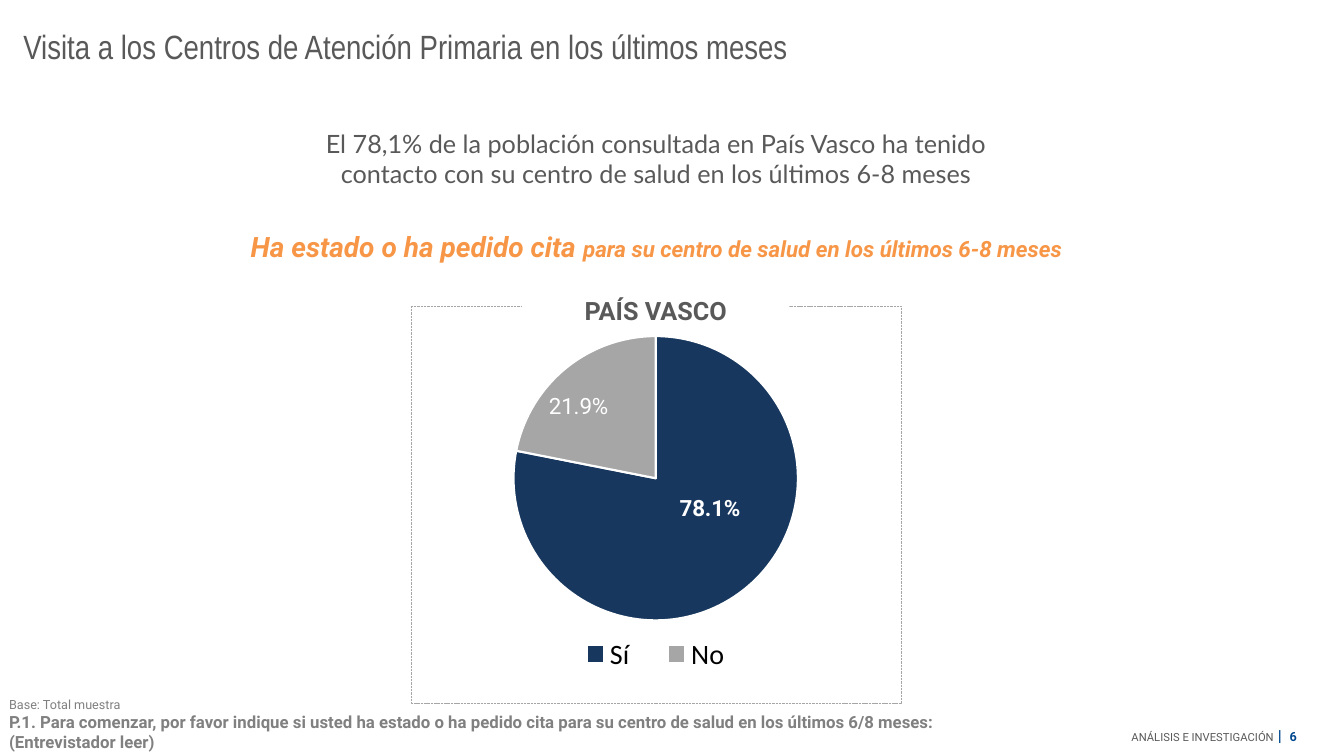
from lxml.etree import SubElement
from pptx import Presentation
from pptx.chart.data import CategoryChartData
from pptx.dml.color import RGBColor
from pptx.enum.chart import XL_CHART_TYPE, XL_LABEL_POSITION, XL_LEGEND_POSITION
from pptx.enum.dml import MSO_LINE
from pptx.enum.shapes import MSO_SHAPE
from pptx.enum.text import MSO_ANCHOR, PP_ALIGN
from pptx.oxml.ns import qn
from pptx.util import Inches, Pt

NAVY, SILVER, ORANGE, WHITE = "17375E", "A6A6A6", "F79646", "FFFFFF"
DARK, GREY, BLUE = "595959", "808080", "00478F"


def rgb(value):
    return RGBColor.from_string(value)


def style(font, color, **fmt):
    font.color.rgb = rgb(color)
    for name, value in fmt.items():
        setattr(font, name, Pt(value) if name == "size" else value)


def place(parent, index, **shares):
    """Insert a manual chart layout, in shares of the chart's size."""
    for old in parent.findall(qn("c:layout")):
        parent.remove(old)
    layout = SubElement(parent, qn("c:layout"))
    manual = SubElement(layout, qn("c:manualLayout"))
    for tag, value in shares.items():
        SubElement(manual, qn(f"c:{tag}")).set("val", str(value))
    parent.insert(index, layout)


class SlideBuilder:
    """Places elements by box: left, top, width, height in percent of the slide."""

    def __init__(self, prs):
        self.prs = prs
        self.slide = prs.slides.add_slide(prs.slide_layouts[5])
        self.shapes = self.slide.shapes

    def box(self, x, y, w, h):
        width, height = self.prs.slide_width, self.prs.slide_height
        return [int(v * side / 100) for v, side in
                ((x, width), (y, height), (w, width), (h, height))]

    def fill_text(self, sp, paragraphs, align=PP_ALIGN.LEFT, anchor=MSO_ANCHOR.TOP,
                  wrap=True, after=0):
        """Fill a shape; each paragraph is a list of (text, format) runs."""
        tf = sp.text_frame
        tf.word_wrap, tf.vertical_anchor = wrap, anchor
        for i, runs in enumerate(paragraphs):
            p = tf.paragraphs[0] if i == 0 else tf.add_paragraph()
            p.alignment, p.space_after = align, Pt(after)
            for text, fmt in runs:
                r = p.add_run()
                r.text = text
                style(r.font, **fmt)
        return tf

    def title(self, box, text, **fmt):
        sp = self.shapes.title
        sp.left, sp.top, sp.width, sp.height = self.box(*box)
        self.fill_text(sp, [[(text, fmt)]])

    def text(self, box, paragraphs, **layout):
        sp = self.shapes.add_textbox(*self.box(*box))
        return self.fill_text(sp, paragraphs, **layout)

    def rect(self, box, fill=None, line=None):
        sp = self.shapes.add_shape(MSO_SHAPE.RECTANGLE, *self.box(*box))
        sp.shadow.inherit = False
        if fill:
            sp.fill.solid()
            sp.fill.fore_color.rgb = rgb(fill)
        else:
            sp.fill.background()
        if line:
            sp.line.color.rgb = rgb(line)
            sp.line.width = Pt(0.25)
            sp.line.dash_style = MSO_LINE.SQUARE_DOT
        else:
            sp.line.fill.background()
        return sp

    def pie(self, box, slices):
        """Draw slices of (category, value, color, bold, label shift)."""
        data = CategoryChartData(number_format="0.0\\%")
        data.categories = [s[0] for s in slices]
        data.add_series("Series 1", [s[1] for s in slices])
        chart = self.shapes.add_chart(XL_CHART_TYPE.PIE, *self.box(*box), data).chart
        style(chart.font, "000000", name="Calibri", size=10)
        chart.has_title = False
        chart.has_legend = True
        legend = chart.legend
        legend.position = XL_LEGEND_POSITION.BOTTOM
        legend.include_in_layout = False
        style(legend.font, "000000", name="Calibri", size=20)

        plot = chart.plots[0]
        plot.vary_by_categories = True
        plot.has_data_labels = True
        labels = plot.data_labels
        labels.show_value, labels.show_percentage = True, False
        labels.number_format = "0.0\\%"
        labels.number_format_is_linked = False
        style(labels.font, WHITE, name="Roboto", size=16)
        for i, (_, _, color, bold, _) in enumerate(slices):
            point = plot.series[0].points[i]
            point.format.fill.solid()
            point.format.fill.fore_color.rgb = rgb(color)
            point.format.line.color.rgb = rgb(WHITE)
            point.format.line.width = Pt(1.5)
            label = point.data_label
            style(label.font, WHITE, name="Roboto", size=16, bold=bold)
            label.position = XL_LABEL_POSITION.CENTER

        root = chart.element
        for label, (*_, (dx, dy)) in zip(root.iter(qn("c:dLbl")), slices):
            place(label, 1, x=dx, y=dy)
        place(root.find(".//" + qn("c:plotArea")), 0, layoutTarget="inner",
              xMode="edge", yMode="edge", x=0.19, y=0.07, w=0.62, h=0.72)
        place(root.find(".//" + qn("c:legend")), 1, xMode="edge", yMode="edge",
              x=0.3, y=0.82, w=0.4, h=0.11)


def main():
    prs = Presentation()
    prs.slide_width, prs.slide_height = Inches(13.33), Inches(7.5)
    s = SlideBuilder(prs)
    roboto = {"name": "Roboto"}
    orange = {"color": ORANGE, "bold": True, "italic": True, **roboto}
    center = {"align": PP_ALIGN.CENTER, "after": 6}

    s.text((82.9, 95.33, 14.33, 3.87), [[
        ("ANÁLISIS E INVESTIGACIÓN", {"color": DARK, "size": 8, **roboto}),
        (" ", {"color": DARK, "size": 11, **roboto}),
        ("|  ", {"color": BLUE, "size": 11, "bold": True, **roboto}),
        ("6", {"color": BLUE, "size": 9, "bold": True, **roboto}),
    ]], align=PP_ALIGN.RIGHT, anchor=MSO_ANCHOR.MIDDLE, wrap=False)
    s.title((0.98, 2.8, 79.82, 12.13),
            "Visita a los Centros de Atención Primaria en los últimos meses",
            color=DARK, size=24, name="Arial Narrow")
    note = s.text((0, 94.13, 77.42, 5.87), [
        [("Base: Total muestra", {"color": GREY, "size": 9, **roboto})],
        [("P.1. Para comenzar, por favor indique si usted ha estado o ha pedido cita "
          "para su centro de salud en los últimos 6/8 meses: (Entrevistador leer)",
          {"color": GREY, "size": 12, "bold": True, **roboto})],
    ], anchor=MSO_ANCHOR.BOTTOM)
    note.margin_left = note.margin_right = Inches(0.09)
    note.margin_top = note.margin_bottom = Inches(0.04)

    s.fill_text(s.rect((11.63, 29.73, 74.42, 5.87), fill=WHITE), [[
        ("Ha estado o ha pedido cita ", {"size": 20, **orange}),
        ("para su centro de salud en los últimos 6-8 meses", {"size": 16, **orange}),
    ]], **center)
    s.rect((30.6, 40.53, 36.45, 52.53), line=SILVER)
    s.pie((31.73, 40.8, 34.13, 52.27), [
        ("Sí ", 78.1, NAVY, True, (0.02, -0.06)),
        ("No", 21.9, SILVER, False, (-0.07, -0.04)),
    ])
    s.fill_text(s.rect((38.85, 37.5, 19.88, 7.07), fill=WHITE), [[
        ("PAÍS VASCO", {"color": DARK, "size": 18, "bold": True, **roboto}),
    ]], anchor=MSO_ANCHOR.MIDDLE, **center)
    s.text((23.03, 14.13, 51.54, 13.6), [[
        ("El 78,1% de la población consultada en País Vasco ha tenido contacto "
         "con su centro de salud en los últimos 6-8 meses",
         {"color": DARK, "size": 18, "name": "Lato"}),
    ]], anchor=MSO_ANCHOR.MIDDLE, **center)
    prs.save("out.pptx")


if __name__ == "__main__":
    main()
